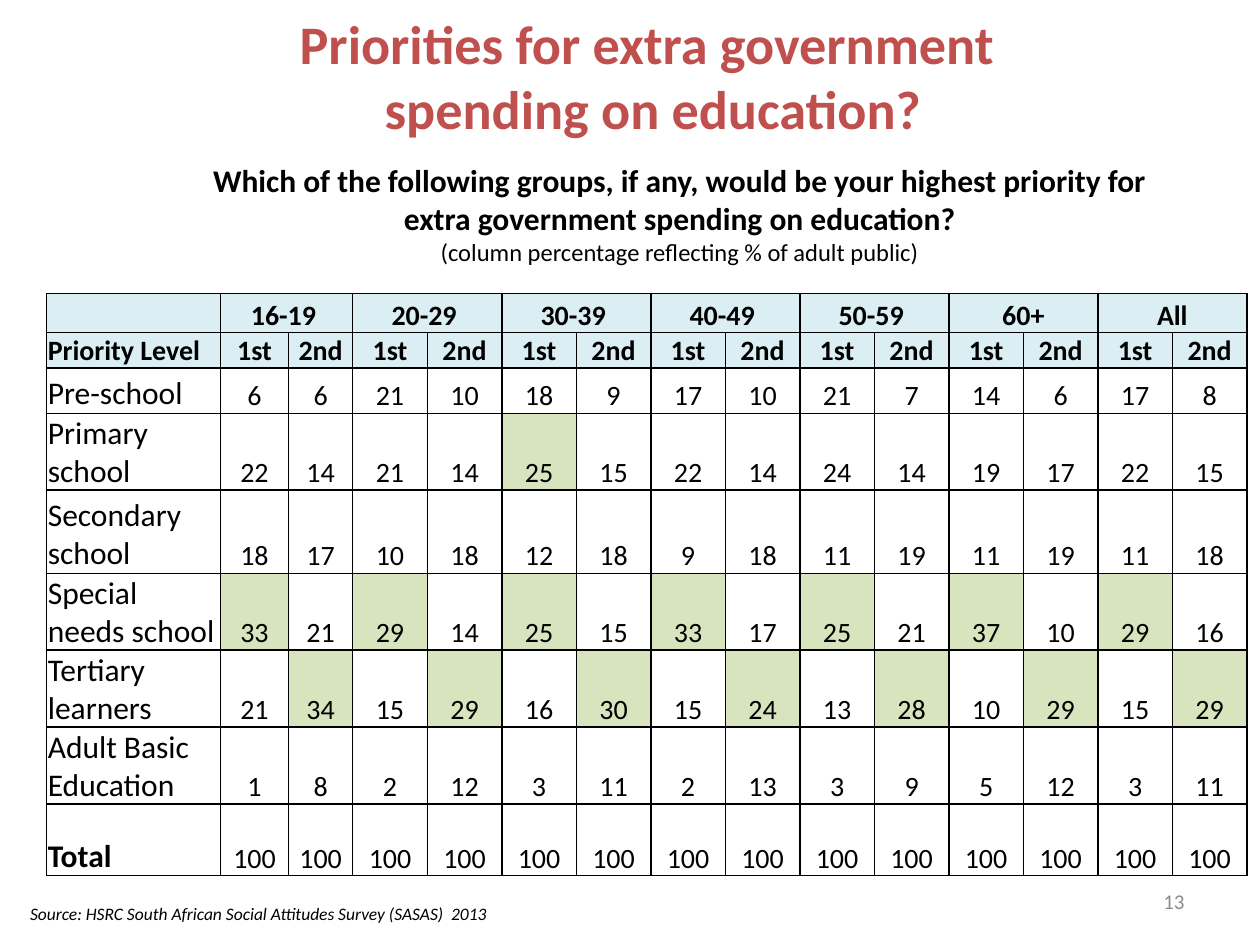
import dataclasses

import lxml.etree
import pptx
import pptx.dml.color
import pptx.enum.text
import pptx.oxml.ns
import pptx.util

Inches = pptx.util.Inches
ALIGN = pptx.enum.text.PP_ALIGN
ANCHOR = pptx.enum.text.MSO_ANCHOR


@dataclasses.dataclass(frozen=True)
class Theme:
    """Font, colours and type sizes of the slide."""
    font: str = "Calibri"
    ink: str = "000000"
    title: str = "C0504D"
    muted: str = "8C8C8C"
    header: str = "DBEEF4"
    highlight: str = "D7E4BD"
    title_size: int = 31
    label_size: int = 18
    value_size: int = 16
    note_size: int = 14
    number_size: int = 12
    source_size: int = 10


THEME = Theme()

AGES = ["16-19 ", "20-29 ", "30-39 ", "40-49 ", "50-59 ", "60+", "All"]
LEVELS = {
    "Pre-school": [6, 6, 21, 10, 18, 9, 17, 10, 21, 7, 14, 6, 17, 8],
    "Primary school": [22, 14, 21, 14, 25, 15, 22, 14, 24, 14, 19, 17, 22, 15],
    "Secondary school": [18, 17, 10, 18, 12, 18, 9, 18, 11, 19, 11, 19, 11, 18],
    "Special needs school": [33, 21, 29, 14, 25, 15, 33, 17, 25, 21, 37, 10, 29, 16],
    "Tertiary learners": [21, 34, 15, 29, 16, 30, 15, 24, 13, 28, 10, 29, 15, 29],
    "Adult Basic Education": [1, 8, 2, 12, 3, 11, 2, 13, 3, 9, 5, 12, 3, 11],
}
COL_WIDTHS = [1.38, 0.54, 0.51] + [7.1 / 12] * 12
ROW_HEIGHTS = [0.28, 0.28, 0.36, 0.61, 0.66, 0.61, 0.61, 0.61, 0.57]


def write(p, text, size, color=THEME.ink, bold=False, italic=False, align=ALIGN.LEFT):
    """Write formatted text into a paragraph, a newline being a line break."""
    p.alignment = align
    for i, line in enumerate(text.split("\n")):
        if i:
            p.add_line_break()
        r = p.add_run()
        r.text = line
        r.font.name = THEME.font
        r.font.size = pptx.util.Pt(size)
        r.font.bold = bold
        r.font.italic = italic
        r.font.color.rgb = pptx.dml.color.RGBColor.from_string(color)


def add_text(s, box, anchor=ANCHOR.TOP):
    """Add a wrapping text box and return its text frame."""
    tf = s.shapes.add_textbox(*map(Inches, box)).text_frame
    tf.word_wrap = True
    tf.vertical_anchor = anchor
    return tf


def add_borders(cell):
    """Draw a thin solid line on all four sides of a cell."""
    tc_pr = cell._tc.get_or_add_tcPr()
    qn = pptx.oxml.ns.qn
    for i, side in enumerate(("a:lnL", "a:lnR", "a:lnT", "a:lnB")):
        ln = lxml.etree.Element(qn(side), w=str(pptx.util.Pt(1)))
        fill = lxml.etree.SubElement(ln, qn("a:solidFill"))
        lxml.etree.SubElement(fill, qn("a:srgbClr"), val=THEME.ink)
        tc_pr.insert(i, ln)


def fill_cell(cell, text, fill=None, size=THEME.value_size, bold=False, align=ALIGN.CENTER):
    """Set the text, fill, margins and borders of a table cell."""
    cell.margin_left = cell.margin_right = cell.margin_top = Inches(0.01)
    cell.margin_bottom = 0
    cell.vertical_anchor = ANCHOR.BOTTOM
    if fill:
        cell.fill.solid()
        cell.fill.fore_color.rgb = pptx.dml.color.RGBColor.from_string(fill)
    else:
        cell.fill.background()
    add_borders(cell)
    write(cell.text_frame.paragraphs[0], text, size, bold=bold, align=align)


def add_priorities(s):
    """Add the table of priorities, the top value of each column highlighted."""
    rows, cols = len(ROW_HEIGHTS), len(COL_WIDTHS)
    table = s.shapes.add_table(rows, cols, Inches(0.37), Inches(2.33),
                               Inches(sum(COL_WIDTHS)), Inches(sum(ROW_HEIGHTS))).table
    table.first_row = table.horz_banding = False
    for column, width in zip(table.columns, COL_WIDTHS):
        column.width = Inches(width)
    for row, height in zip(table.rows, ROW_HEIGHTS):
        row.height = Inches(height)

    ages = [text for age in AGES for text in (age, "")]
    for c, text in enumerate([""] + ages):
        fill_cell(table.cell(0, c), text, THEME.header, bold=True)
    for c in range(1, cols, 2):
        table.cell(0, c).merge(table.cell(0, c + 1))
    for c, text in enumerate(["Priority Level"] + ["1st", "2nd"] * len(AGES)):
        fill_cell(table.cell(1, c), text, THEME.header, bold=True,
                  align=ALIGN.CENTER if c else ALIGN.LEFT)

    tops = [max(column) for column in zip(*LEVELS.values())]
    body = {**LEVELS, "Total": [100] * len(tops)}
    for i, (label, values) in enumerate(body.items(), start=2):
        fill_cell(table.cell(i, 0), label, size=THEME.label_size,
                  bold=label == "Total", align=ALIGN.LEFT)
        for c, (value, top) in enumerate(zip(values, tops), start=1):
            fill_cell(table.cell(i, c), str(value), THEME.highlight if value == top else None)


def main():
    """Build the slide and save it."""
    prs = pptx.Presentation()
    prs.slide_width, prs.slide_height = Inches(10), Inches(7.5)
    s = prs.slides.add_slide(prs.slide_layouts[6])

    tf = add_text(s, (0.68, -0.03, 9, 1.25), ANCHOR.MIDDLE)
    write(tf.paragraphs[0], "Priorities for extra government \nspending on education?",
          THEME.title_size, THEME.title, bold=True, align=ALIGN.CENTER)

    tf = add_text(s, (7.17, 6.95, 2.33, 0.4), ANCHOR.MIDDLE)
    write(tf.paragraphs[0], "13", THEME.number_size, THEME.muted, align=ALIGN.RIGHT)

    tf = add_text(s, (0.14, 7.12, 7.02, 0.26))
    write(tf.paragraphs[0], "Source: HSRC South African Social Attitudes Survey (SASAS)  2013",
          THEME.source_size, italic=True)

    add_priorities(s)

    tf = add_text(s, (1.3, 1.23, 8.19, 0.94))
    write(tf.paragraphs[0], "Which of the following groups, if any, would be your highest "
          "priority for extra government spending on education?",
          THEME.label_size, bold=True, align=ALIGN.CENTER)
    write(tf.add_paragraph(), "(column percentage reflecting % of adult public)",
          THEME.note_size, align=ALIGN.CENTER)
    prs.save("out.pptx")


if __name__ == "__main__":
    main()
